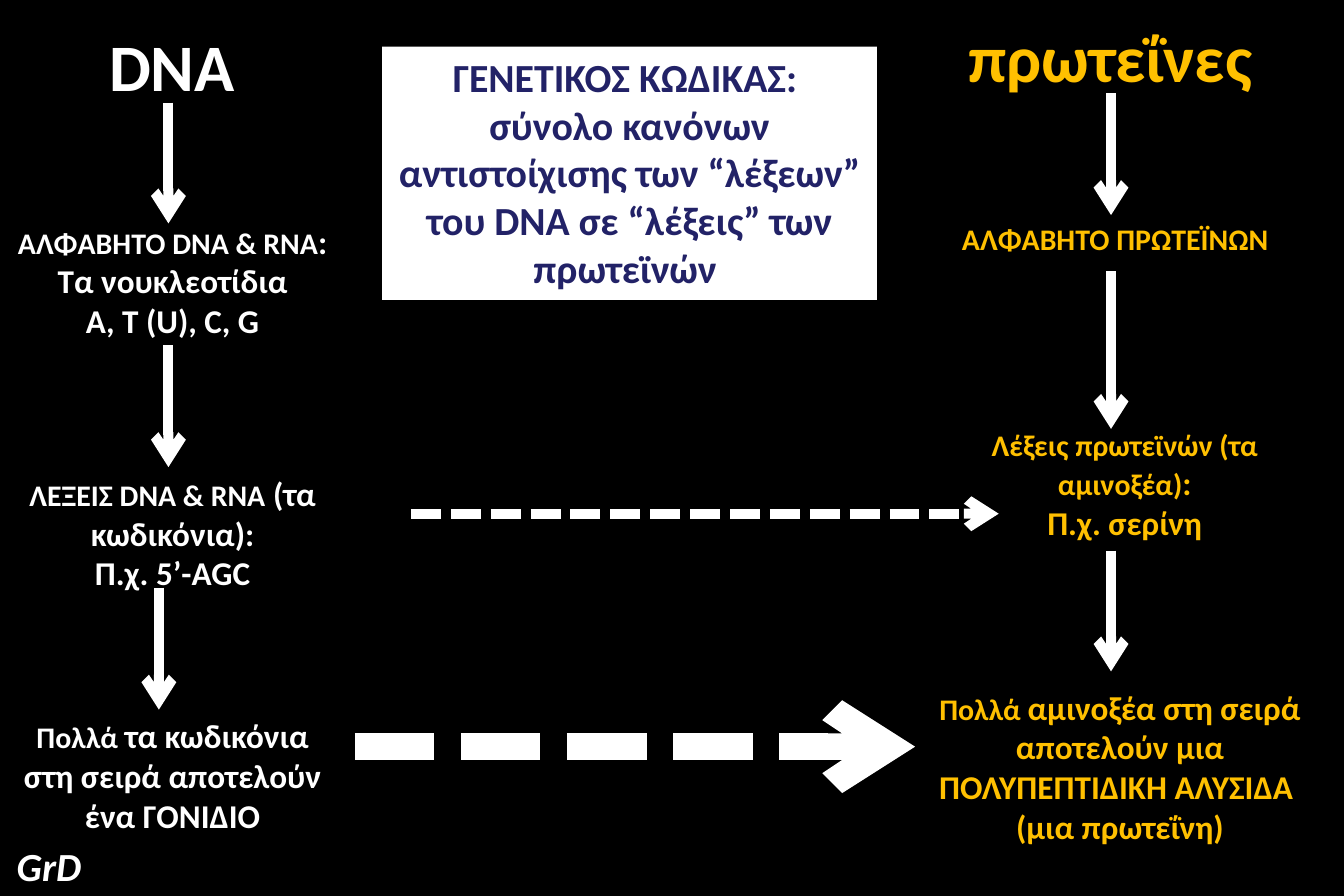
from typing import NamedTuple

import pptx
import pptx.dml.color
import pptx.enum.dml
import pptx.enum.shapes
import pptx.enum.text
import pptx.oxml
import pptx.oxml.ns
import pptx.util
from pptx.util import Inches

BLACK, WHITE, GOLD, NAVY = "000000", "FFFFFF", "FFC000", "222267"


class Run(NamedTuple):
    text: str
    size: int = 20


class Label(NamedTuple):
    left: float
    top: float
    width: float
    height: float
    color: str
    paragraphs: list[list[Run]]
    italic: bool = False
    fill: str | None = None


class Arrow(NamedTuple):
    start: tuple[float, float]
    end: tuple[float, float]
    width: int = 6
    dashed: bool = False


DNA_X, PROTEIN_X = 1.41, 9.3
COLUMN_WIDTH = 2.89

LABELS = [
    Label(3.2, 0.39, 4.14, 2.12, NAVY, [
        [Run("ΓΕΝΕΤΙΚΟΣ ΚΩΔΙΚΑΣ: ", 24)],
        [Run("σύνολο κανόνων αντιστοίχισης των “λέξεων” του DNA σε “λέξεις” των πρωτεϊνών ", 24)],
    ], fill=WHITE),
    Label(0.7, 0.16, 1.48, 0.77, WHITE, [[Run("DNA", 40)]]),
    Label(7.89, 0.09, 2.81, 0.77, GOLD, [[Run("πρωτεΐνες", 40)]]),
    Label(0, 1.8, COLUMN_WIDTH, 1.11, WHITE, [
        [Run("ΑΛΦΑΒΗΤΟ DNA & RNA", 18), Run(": Τα νουκλεοτίδια")],
        [Run("Α, Τ (U), C, G")],
    ]),
    Label(7.89, 1.8, COLUMN_WIDTH, 0.4, GOLD, [[Run("ΑΛΦΑΒΗΤΟ ΠΡΩΤΕΪΝΩΝ", 18)]]),
    Label(0, 3.91, COLUMN_WIDTH, 1.11, WHITE, [
        [Run("ΛΕΞΕΙΣ DNA & RNA", 18), Run(" (τα κωδικόνια):")],
        [Run("Π.χ. 5’-AGC")],
    ]),
    Label(7.97, 3.52, COLUMN_WIDTH, 1.08, GOLD, [
        [Run("Λέξεις πρωτεϊνών (τα αμινοξέα)", 18), Run(":")],
        [Run("Π.χ. σερίνη")],
    ]),
    Label(0, 5.94, COLUMN_WIDTH, 1.11, WHITE, [
        [Run("Πολλά ", 18), Run("τα κωδικόνια στη σειρά αποτελούν ένα ΓΟΝΙΔΙΟ")],
    ]),
    Label(7.73, 5.7, 3.29, 1.45, GOLD, [
        [Run("Πολλά ", 18), Run("αμινοξέα στη σειρά αποτελούν μια ΠΟΛΥΠΕΠΤΙΔΙΚΗ ΑΛΥΣΙΔΑ ")],
        [Run("(μια πρωτεΐνη)")],
    ]),
    Label(0, 7, 0.82, 0.5, WHITE, [[Run("GrD", 24)]], italic=True),
]

ARROWS = [
    Arrow((DNA_X, 0.86), (DNA_X, 1.87)),
    Arrow((DNA_X, 2.89), (DNA_X, 3.91)),
    Arrow((1.33, 4.92), (1.33, 5.94)),
    Arrow((PROTEIN_X, 0.78), (PROTEIN_X, 1.8)),
    Arrow((PROTEIN_X, 2.27), (PROTEIN_X, 3.59)),
    Arrow((PROTEIN_X, 4.61), (PROTEIN_X, 5.62)),
    Arrow((3.44, 4.3), (8.36, 4.3), dashed=True),
    Arrow((2.97, 6.25), (7.66, 6.25), width=16, dashed=True),
]


def rgb(color: str) -> pptx.dml.color.RGBColor:
    return pptx.dml.color.RGBColor.from_string(color)


def set_attributes(target: object, values: dict[str, object]) -> None:
    for name, value in values.items():
        setattr(target, name, value)


def draw_label(slide: pptx.slide.Slide, label: Label) -> None:
    box = [Inches(value) for value in label[:4]]
    if label.fill:
        shape = slide.shapes.add_shape(pptx.enum.shapes.MSO_SHAPE.RECTANGLE, *box)
        shape.shadow.inherit = False
        shape.fill.solid()
        shape.fill.fore_color.rgb = rgb(label.fill)
        shape.line.fill.background()
    else:
        shape = slide.shapes.add_textbox(*box)
    frame = shape.text_frame
    set_attributes(frame, {
        "word_wrap": True,
        "auto_size": pptx.enum.text.MSO_AUTO_SIZE.SHAPE_TO_FIT_TEXT,
        "vertical_anchor": pptx.enum.text.MSO_ANCHOR.TOP,
    })
    for index, runs in enumerate(label.paragraphs):
        paragraph = frame.add_paragraph() if index else frame.paragraphs[0]
        paragraph.alignment = pptx.enum.text.PP_ALIGN.CENTER
        for part in runs:
            run = paragraph.add_run()
            run.text = part.text
            set_attributes(run.font, {
                "name": "Calibri",
                "size": pptx.util.Pt(part.size),
                "bold": True,
                "italic": label.italic,
            })
            run.font.color.rgb = rgb(label.color)


def draw_arrow(slide: pptx.slide.Slide, arrow: Arrow) -> None:
    connector = slide.shapes.add_connector(
        pptx.enum.shapes.MSO_CONNECTOR.STRAIGHT,
        *[Inches(value) for value in arrow.start + arrow.end],
    )
    line = connector.line
    line.color.rgb = rgb(WHITE)
    line.width = pptx.util.Pt(arrow.width)
    if arrow.dashed:
        line.dash_style = pptx.enum.dml.MSO_LINE.SQUARE_DOT
        # SQUARE_DOT is the short system dot; the arrows use the longer system dash.
        line_dash = connector.element.find(".//" + pptx.oxml.ns.qn("a:prstDash"))
        line_dash.set("val", "sysDash")
    namespace = pptx.oxml.ns.nsdecls("a")
    properties = connector.element.spPr
    properties.find(pptx.oxml.ns.qn("a:ln")).append(
        pptx.oxml.parse_xml(f'<a:tailEnd {namespace} type="arrow"/>'))
    properties.append(pptx.oxml.parse_xml(f"<a:effectLst {namespace}/>"))


def main() -> None:
    presentation = pptx.Presentation()
    presentation.slide_width = Inches(11.25)
    presentation.slide_height = Inches(7.5)
    slide = presentation.slides.add_slide(presentation.slide_layouts[6])
    slide.background.fill.solid()
    slide.background.fill.fore_color.rgb = rgb(BLACK)
    for label in LABELS:
        draw_label(slide, label)
    for arrow in ARROWS:
        draw_arrow(slide, arrow)
    presentation.save("out.pptx")


if __name__ == "__main__":
    main()
